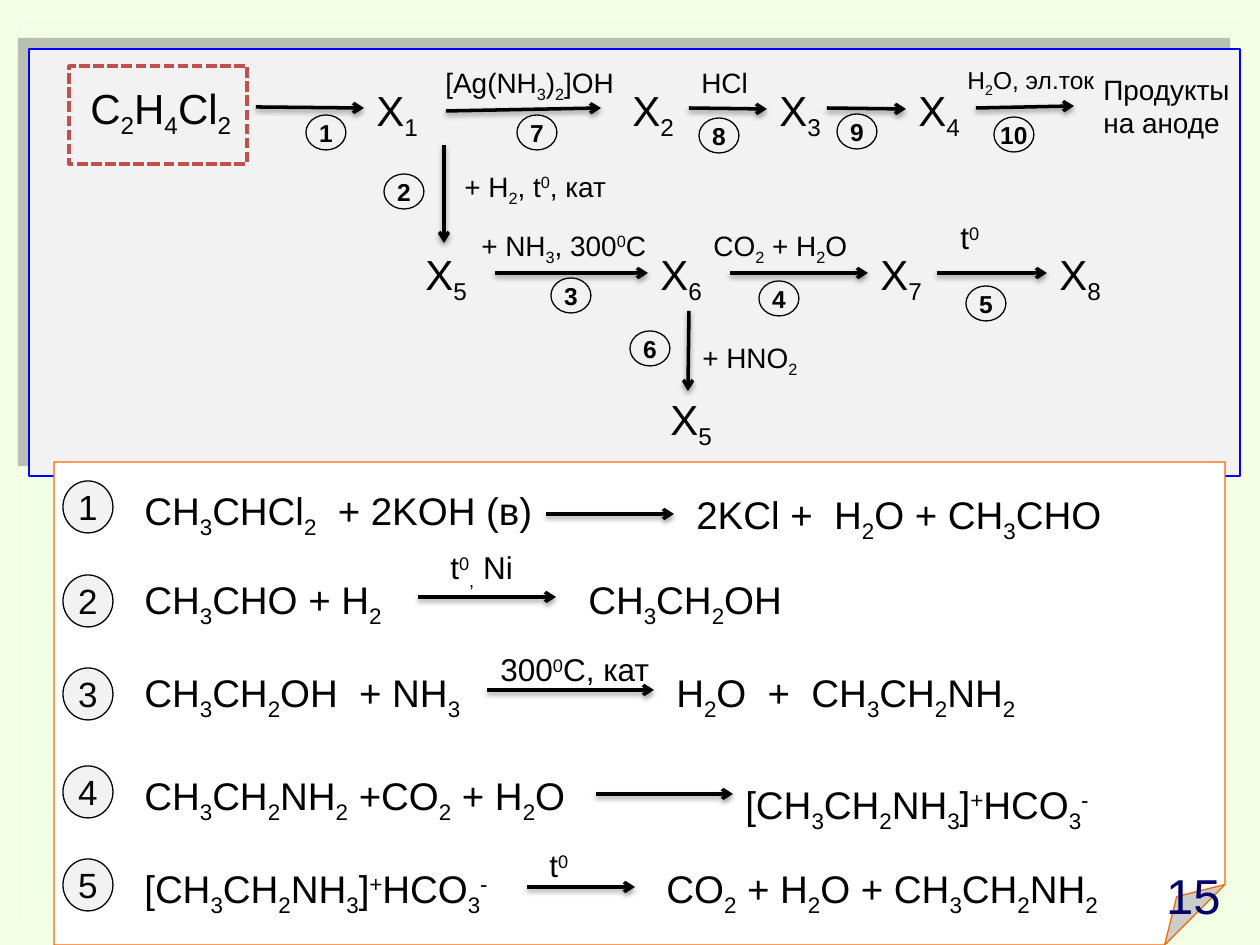
from itertools import groupby

from lxml import etree
from pptx import Presentation
from pptx.dml.color import RGBColor
from pptx.enum.dml import MSO_LINE
from pptx.enum.shapes import MSO_CONNECTOR, MSO_SHAPE
from pptx.enum.text import MSO_ANCHOR, MSO_AUTO_SIZE, PP_ALIGN
from pptx.oxml.ns import qn
from pptx.util import Pt

PX = 7257  # EMU in one px at 126 px to the inch
STRAIGHT = MSO_CONNECTOR.STRAIGHT
RECT, OVAL, FOLDED = MSO_SHAPE.RECTANGLE, MSO_SHAPE.OVAL, MSO_SHAPE.FOLDED_CORNER
LEFT, CENTER = PP_ALIGN.LEFT, PP_ALIGN.CENTER
BASELINES = {"_": -25000, "^": 30000}


class Theme:
    font = "Arial"
    ink, grey, paper = "000000", "F2F2F2", "FFFFFF"
    panel_line, panel_shadow = "0000FF", "808080"
    paper_line, frame, page_number = "FF6600", "C0504D", "000066"
    backdrop = ("C1FFD1", "F5FFE6")
    number, node, equation, step, heat, reagent, small = 28, 24, 22, 20, 18, 16, 14


HEIGHTS = {28: 66, 24: 63, 22: 57, 18: 48, 16: 46, 14: 43}  # text size to box height

# In all texts "_" lowers and "^" raises the next character.
NODE_ROWS = [  # top, [(left, text)]
    (78, [(364, "X_1"), (620, "X_2"), (767, "Х_3"), (906, "Х_4")]),
    (242, [(413, "X_5"), (648, "X_6"), (868, "X_7"), (1047, "X_8")]),
    (387, [(658, "X_5")]),
]
LABELS = [  # left, top, width, size, text
    (78, 76, 178, Theme.node, "С_2H_4Cl_2"),
    (433, 59, 206, Theme.reagent, "[Ag(NH_3)_2]OH"),
    (689, 59, 78, Theme.reagent, "HСl"),
    (955, 59, 178, Theme.small, "H_2O, эл.ток"),
    (1091, 66, 169, Theme.reagent, "Продукты на аноде"),
    (452, 163, 251, Theme.reagent, "+ H_2, t^0, кат"),
    (469, 222, 251, Theme.reagent, "+ NH_3, 300^0C"),
    (701, 222, 186, Theme.reagent, "CO_2 + H_2O"),
    (948, 212, 50, Theme.heat, "t^0"),
    (690, 334, 129, Theme.reagent, "+ HNO_2"),
]
SCHEME_ARROWS = [  # from x, from y, to x, to y
    (256, 107, 364, 108), (446, 111, 601, 108), (689, 108, 767, 109),
    (827, 108, 906, 109), (976, 108, 1074, 106), (444, 145, 444, 243),
    (495, 273, 648, 273), (730, 273, 868, 273), (937, 273, 1047, 273),
    (689, 311, 688, 391),
]
SCHEME_BADGES = [  # left, top, number
    (306, 115, 1), (384, 174, 2), (551, 278, 3), (759, 281, 4), (966, 286, 5),
    (630, 331, 6), (517, 115, 7), (699, 118, 8), (837, 114, 9), (994, 117, 10),
]
STEPS = [  # badge top, text top, reactants, arrow (x, x, y), product (left, top, text)
    (481, 481, "CH_3CHCl_2  + 2KOH (в)", (546, 674, 514), (684, 485, "2KCl +  H_2O + CH_3CHO")),
    (575, 570, "CH_3CHO + H_2", (418, 556, 597), (576, 570, "CH_3CH_2OH")),
    (668, 663, "CH_3CH_2OH  + NH_3", (487, 654, 690), (664, 663, "H_2O  +  CH_3CH_2NH_2")),
    (766, 766, "CH_3CH_2NH_2 +CO_2 + H_2O", (596, 733, 794), (733, 775, "[CH_3CH_2NH_3]^+HCO_3^-")),
    (859, 859, "[CH_3CH_2NH_3]^+HCO_3^-", (527, 635, 887), (654, 859, "CO_2 + H_2O + CH_3CH_2NH_2")),
]
STEP_CONDITIONS = [  # left, top, width, text
    (438, 542, 98, "t^0_, Ni"), (488, 644, 182, "300^0C, кат"), (537, 840, 50, "t^0"),
]


def emu(*lengths):
    return [length * PX for length in lengths]


def split_baselines(text):
    """Yield (baseline, piece) for each stretch of equally raised characters."""
    marked = [(BASELINES.get(before, 0), char)
              for before, char in zip(" " + text, text) if char not in BASELINES]
    for baseline, group in groupby(marked, key=lambda pair: pair[0]):
        yield baseline, "".join(char for _, char in group)


def write(frame, text, size, align=LEFT, color=Theme.ink, bold=False):
    para = frame.paragraphs[0]
    para.alignment = align
    for baseline, piece in split_baselines(text):
        span = para.add_run()
        span.text = piece
        span.font.name = Theme.font
        span.font.size = Pt(size)
        span.font.bold = bold
        span.font.color.rgb = RGBColor.from_string(color)
        if baseline:
            span.font._element.set("baseline", str(baseline))


def add_text(page, left, top, width, size, text, **style):
    box = page.shapes.add_textbox(*emu(left, top, width, HEIGHTS[size]))
    box.text_frame.word_wrap = True
    box.text_frame.auto_size = MSO_AUTO_SIZE.SHAPE_TO_FIT_TEXT
    write(box.text_frame, text, size, **style)


def add_shadow(properties, color, alpha, blur, distance, angle):
    effects = properties.find(qn("a:effectLst"))
    if effects is None:
        effects = etree.SubElement(properties, qn("a:effectLst"))
    shadow = etree.SubElement(
        effects, qn("a:outerShdw"), blurRad=str(Pt(blur)), dist=str(Pt(distance)),
        dir=str(angle * 60000), algn="ctr", rotWithShape="0")
    tint = etree.SubElement(shadow, qn("a:srgbClr"), val=color)
    etree.SubElement(tint, qn("a:alpha"), val=str(alpha * 1000))


def add_block(page, kind, place, fill, line, width=0.75):
    block = page.shapes.add_shape(kind, *emu(*place))
    if fill:
        block.fill.solid()
        block.fill.fore_color.rgb = RGBColor.from_string(fill)
    else:
        block.fill.background()
    block.line.color.rgb = RGBColor.from_string(line)
    block.line.width = Pt(width)
    block.shadow.inherit = False
    return block


def add_badge(page, place, number, size, bold=False):
    badge = add_block(page, OVAL, place, Theme.grey, Theme.ink)
    badge.text_frame.word_wrap = False
    badge.text_frame.vertical_anchor = MSO_ANCHOR.MIDDLE
    write(badge.text_frame, str(number), size, CENTER, bold=bold)


def add_arrow(page, *ends):
    arrow = page.shapes.add_connector(STRAIGHT, *emu(*ends))
    arrow.line.color.rgb = RGBColor.from_string(Theme.ink)
    arrow.line.width = Pt(2)
    etree.SubElement(arrow.line._get_or_add_ln(), qn("a:tailEnd"), type="arrow")
    add_shadow(arrow._element.spPr, Theme.ink, 38, 3.1, 1.6, 90)


def paint_background(page):
    fill = page.background.fill
    fill.gradient()
    for stop, color in zip(fill.gradient_stops, Theme.backdrop):
        stop.color.rgb = RGBColor.from_string(color)
    linear = page.element.find(".//" + qn("a:lin"))
    radial = etree.Element(qn("a:path"), {"path": "shape"})
    etree.SubElement(radial, qn("a:fillToRect"), dict.fromkeys("ltrb", "50000"))
    linear.getparent().replace(linear, radial)


def add_scheme(page):
    panel = add_block(page, RECT, (29, 49, 1211, 427), Theme.grey, Theme.panel_line)
    add_shadow(panel._element.spPr, Theme.panel_shadow, 50, 0, 8.5, 225)
    frame = add_block(page, RECT, (69, 66, 178, 98), None, Theme.frame, 2)
    frame.line.dash_style = MSO_LINE.SQUARE_DOT
    for top, nodes in NODE_ROWS:
        for left, text in nodes:
            add_text(page, left, top, 82, Theme.node, text)
    for label in LABELS:
        add_text(page, *label)
    for ends in SCHEME_ARROWS:
        add_arrow(page, *ends)
    for left, top, number in SCHEME_BADGES:
        add_badge(page, (left, top, 40, 35), number, Theme.small, bold=True)


def add_steps(page):
    sheet = add_block(page, FOLDED, (54, 462, 1171, 483), Theme.paper, Theme.paper_line)
    guides = sheet._element.spPr.find(".//" + qn("a:avLst"))
    etree.SubElement(guides, qn("a:gd"), name="adj", fmla="val 12500")
    for number, (badge_top, top, reactants, arrow, product) in enumerate(STEPS, 1):
        add_badge(page, (63, badge_top, 50, 52), number, Theme.step)
        add_text(page, 132, top, 493, Theme.equation, reactants)
        start, end, level = arrow
        add_arrow(page, start, level, end, level)
        left, product_top, text = product
        add_text(page, left, product_top, 493, Theme.equation, text)
    for left, top, width, text in STEP_CONDITIONS:
        add_text(page, left, top, width, Theme.heat, text)


deck = Presentation()
deck.slide_width, deck.slide_height = emu(1260, 945)
page = deck.slides.add_slide(deck.slide_layouts[6])
paint_background(page)
add_scheme(page)
add_steps(page)
add_text(page, 1137, 859, 113, Theme.number, "15", align=CENTER, color=Theme.page_number)
deck.save("out.pptx")
